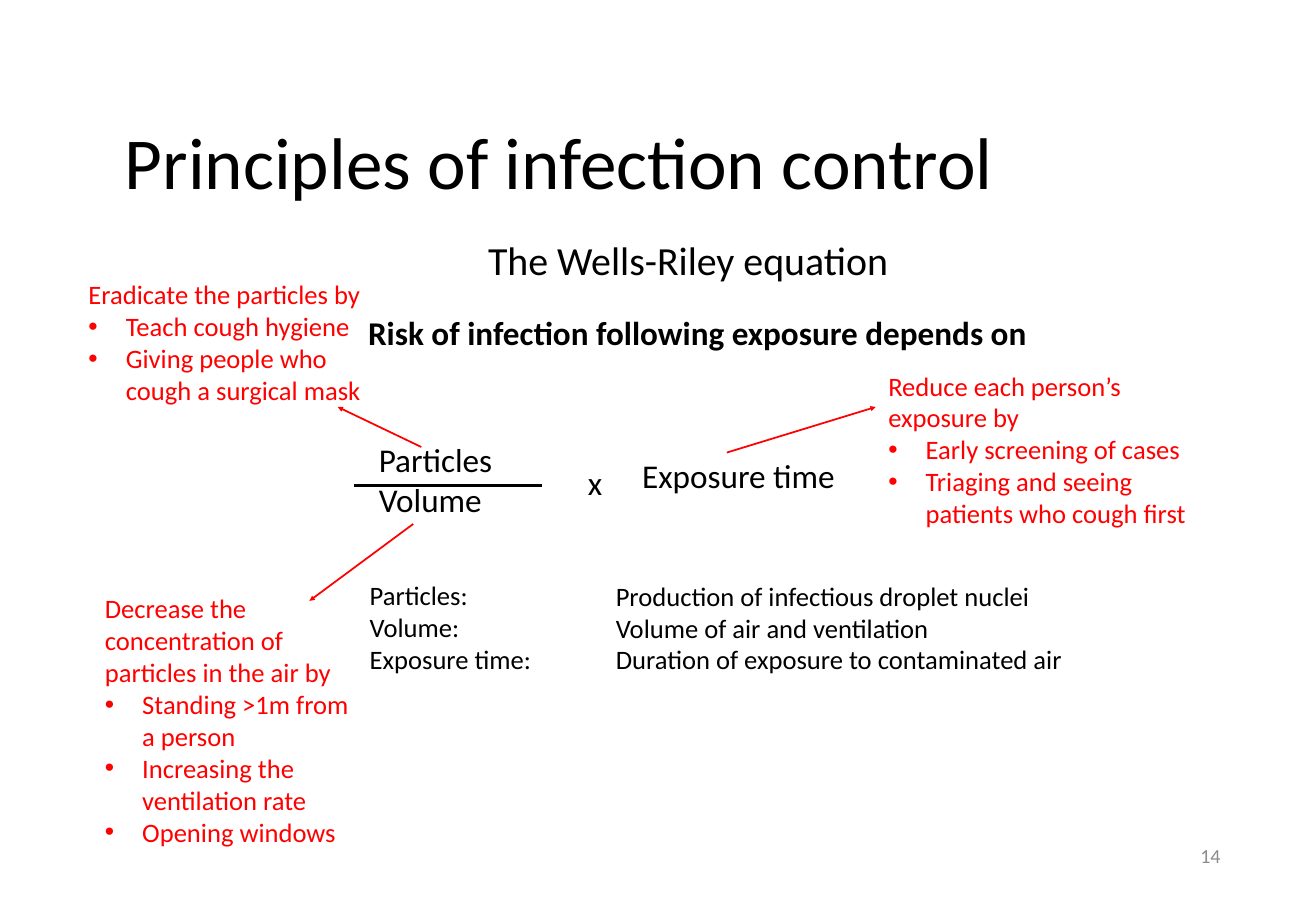
from lxml import etree
from pptx import Presentation
from pptx.dml.color import RGBColor
from pptx.enum import shapes, text
from pptx.oxml import ns
from pptx.util import Pt

COLORS = {"ink": "000000", "advice": "FF0000", "number": "8C8C8C"}
LEFT, CENTER, RIGHT, JUSTIFY = (
    text.PP_ALIGN.LEFT, text.PP_ALIGN.CENTER, text.PP_ALIGN.RIGHT, text.PP_ALIGN.JUSTIFY)
TOP, MIDDLE = text.MSO_ANCHOR.TOP, text.MSO_ANCHOR.MIDDLE
BULLET_INDENT = Pt(53.2)
POINTS_PER_CM = 72 / 2.54

deck = Presentation()
deck.slide_width, deck.slide_height = Pt(66 * POINTS_PER_CM), Pt(45 * POINTS_PER_CM)
slide = deck.slides.add_slide(deck.slide_layouts[1])


def write(holder, box, lines, size, color="ink", bold=False, anchor=TOP, wrap=True, **layout):
    """Place the holder and give it one formatted paragraph per line."""
    for side, length in zip(("left", "top", "width", "height"), box):
        setattr(holder, side, Pt(length))
    frame = holder.text_frame
    frame_format = {"text": "\n".join(lines), "word_wrap": wrap, "vertical_anchor": anchor,
                    "auto_size": text.MSO_AUTO_SIZE.NONE}
    for name, value in frame_format.items():
        setattr(frame, name, value)
    for paragraph in frame.paragraphs:
        for name, value in ({"alignment": LEFT} | layout).items():
            setattr(paragraph, name, value)
        for run in paragraph.runs:
            for name, value in {"name": "Calibri", "size": Pt(size), "bold": bold}.items():
                setattr(run.font, name, value)
            run.font.color.rgb = RGBColor.from_string(COLORS[color])
    return frame


def draw_line(start, end, color, width, arrow=False):
    line = slide.shapes.add_connector(
        shapes.MSO_CONNECTOR.STRAIGHT, *(Pt(value) for value in start + end))
    line.line.color.rgb = RGBColor.from_string(COLORS[color])
    line.line.width = Pt(width)
    if arrow:
        etree.SubElement(line.line._get_or_add_ln(), ns.qn("a:tailEnd"), type="triangle")
    etree.SubElement(line._element.spPr, ns.qn("a:effectLst"))


# Title and subtitle
title, subtitle = slide.placeholders
write(title, (170.4, 128.9, 1530.7, 212.4), ["Principles of infection control"], 104,
      anchor=MIDDLE, line_spacing=0.9)
equation_name = write(subtitle, (129, 339.6, 1613.5, 809.3), ["The Wells-Riley equation"], 56.7,
                      alignment=CENTER, level=1, line_spacing=0.9, space_before=Pt(11.8))
subtitle_format = equation_name.paragraphs[0]._p.get_or_add_pPr()
for name, value in {"marL": Pt(85), "indent": 0}.items():
    subtitle_format.set(name, str(value))
etree.SubElement(subtitle_format, ns.qn("a:buNone"))

# Equation, its terms and the slide number
texts = [
    ((1321.2, 1182.2, 421.2, 67.7), ["14"], 28.4,
     {"color": "number", "anchor": MIDDLE, "alignment": RIGHT}),
    ((516.2, 440.6, 1118.9, 64.8), ["Risk of infection following exposure depends on"], 47.2,
     {"bold": True}),
    ((531.4, 621.2, 290.2, 121.7), ["Particles", "Volume"], 47.2, {}),
    ((828.7, 654.3, 39.6, 64.8), ["x"], 47.2, {}),
    ((905.8, 643.7, 435.6, 64.8), ["Exposure time"], 47.2, {}),
    ((518.4, 819.4, 246.2, 144.7), ["Particles:", "Volume:", "Exposure time:"], 37.8,
     {"alignment": JUSTIFY, "wrap": False}),
    ((868.3, 820.6, 790.6, 144.7),
     ["Production of infectious droplet nuclei", "Volume of air and ventilation",
      "Duration of exposure to contaminated air"], 37.8, {"alignment": JUSTIFY}),
]
for box, lines, size, style in texts:
    write(slide.shapes.add_textbox(0, 0, 0, 0), box, lines, size, **style)
draw_line((503.3, 690.4), (771.1, 690.4), "ink", 3)

# Advice for each term: a lead line, bulleted measures and an arrow from the term
advice = [
    ((118.7, 392.2, 401.5, 236.2),
     ["Eradicate the particles by", "Teach cough hygiene",
      "Giving people who cough a surgical mask"],
     (599, 635.7), (480.2, 578.8)),
    ((141.9, 838.6, 370.8, 373.7),
     ["Decrease the concentration of particles in the air by", "Standing >1m from a person",
      "Increasing the ventilation rate", "Opening windows"],
     (587.5, 745.1), (439.9, 854.5)),
    ((1255.7, 521.8, 445, 236.2),
     ["Reduce each person’s exposure by", "Early screening of cases",
      "Triaging and seeing patients who cough first"],
     (1033.2, 643.6), (1244.9, 578.8)),
]
for box, lines, term, note in advice:
    frame = write(slide.shapes.add_textbox(0, 0, 0, 0), box, lines, 37.8, "advice")
    for measure in frame.paragraphs[1:]:
        measure_format = measure._p.get_or_add_pPr()
        for name, value in {"marL": BULLET_INDENT, "indent": -BULLET_INDENT}.items():
            measure_format.set(name, str(value))
        etree.SubElement(measure_format, ns.qn("a:buFont"), typeface="Arial")
        etree.SubElement(measure_format, ns.qn("a:buChar"), char="•")
    draw_line(term, note, "advice", 2.5, arrow=True)

deck.save("out.pptx")
